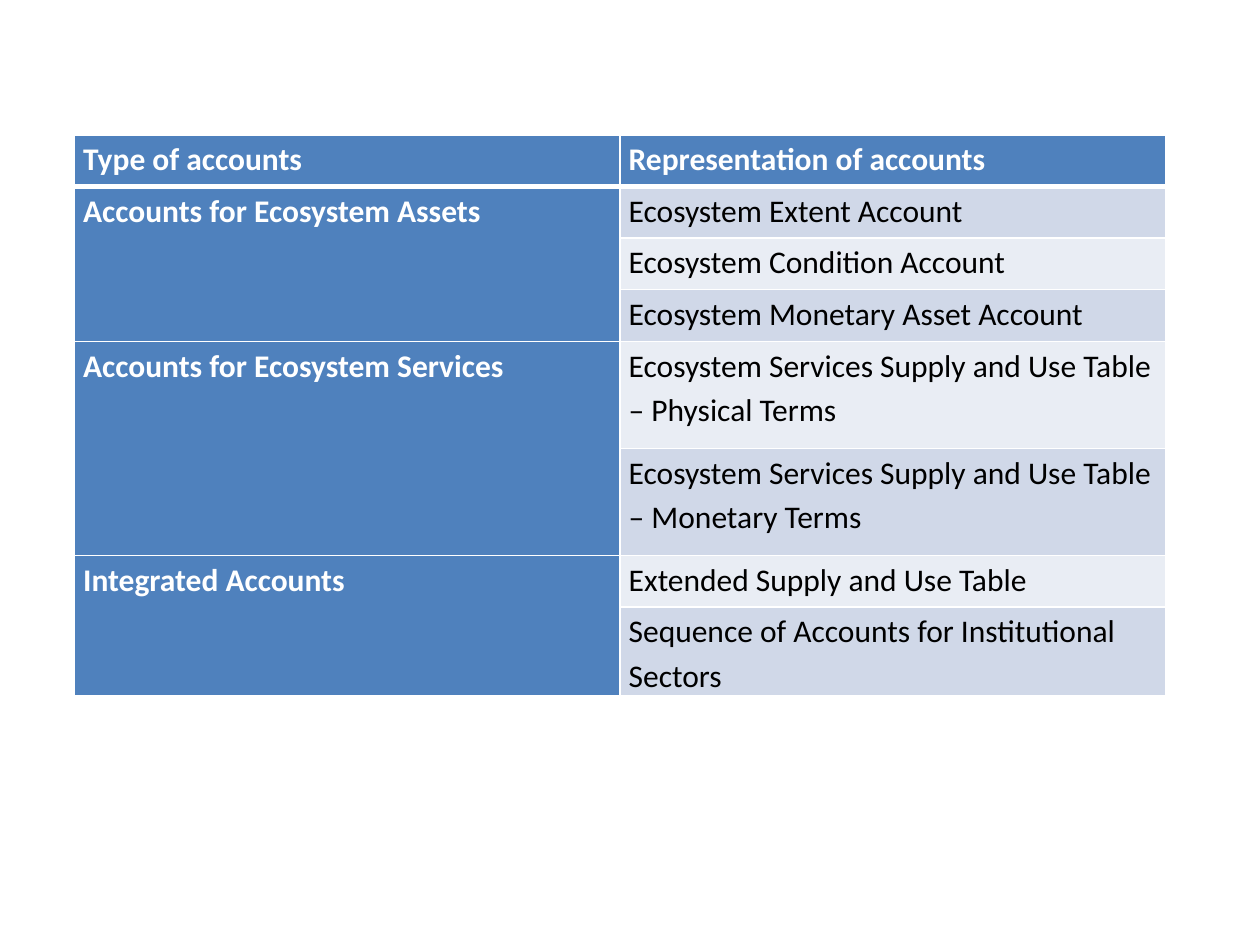
from lxml.etree import SubElement
from pptx import Presentation
from pptx.dml.color import RGBColor
from pptx.oxml.ns import qn
from pptx.util import Inches, Pt

HEADER = ("Type of accounts", "Representation of accounts")
GROUPS = {
    "Accounts for Ecosystem Assets": (
        "Ecosystem Extent Account",
        "Ecosystem Condition Account",
        "Ecosystem Monetary Asset Account",
    ),
    "Accounts for Ecosystem Services": (
        "Ecosystem Services Supply and Use Table – Physical Terms",
        "Ecosystem Services Supply and Use Table – Monetary Terms",
    ),
    "Integrated Accounts": (
        "Extended Supply and Use Table",
        "Sequence of Accounts for Institutional Sectors",
    ),
}
ROW_HEIGHTS = (0.41, 0.41, 0.41, 0.41, 0.85, 0.85, 0.41, 0.41)
BLUE, WHITE, BLACK = "4F81BD", "FFFFFF", "000000"
BANDS = ("E9EDF4", "D0D8E8")


def set_color(color, value):
    """Give a colour format the colour of a hex string."""
    color.rgb = RGBColor.from_string(value)


def set_attributes(target, values):
    """Set each named attribute of an object."""
    for name, value in values.items():
        setattr(target, name, value)


def add_borders(cell, widths):
    """Draw white borders of the given point widths around a cell."""
    properties = cell._tc.get_or_add_tcPr()
    for side, width in widths.items():
        line = SubElement(properties, qn(f"a:ln{side}"), w=str(Pt(width)))
        fill = SubElement(line, qn("a:solidFill"))
        SubElement(fill, qn("a:srgbClr"), val=WHITE)


def format_cell(cell, row, fill, color, bold):
    """Format the borders, fill, margins and text of a cell."""
    add_borders(cell, {"L": 1, "R": 1, "T": 3 if row == 1 else 1, "B": 3 if row == 0 else 1})
    cell.fill.solid()
    set_color(cell.fill.fore_color, fill)
    set_attributes(cell, {"margin_left": Inches(0.07), "margin_right": Inches(0.07),
                          "margin_top": 0, "margin_bottom": 0})
    for para in cell.text_frame.paragraphs:
        para.line_spacing = 1.15
        for span in para.runs:
            set_attributes(span.font, {"name": "Calibri", "size": Pt(18), "bold": bold})
            set_color(span.font.color, color)


def add_accounts_table(page, box):
    """Place the table of accounts in a box of left, top, width and height."""
    table = page.shapes.add_table(len(ROW_HEIGHTS), len(HEADER), *box).table
    for column in table.columns:
        column.width = box[2] // len(HEADER)
    for row, height in zip(table.rows, ROW_HEIGHTS):
        row.height = Inches(height)
    for column, heading in enumerate(HEADER):
        table.cell(0, column).text = heading
    first = 1
    for group, accounts in GROUPS.items():
        table.cell(first, 0).text = group
        for row, account in enumerate(accounts, first):
            table.cell(row, 1).text = account
        last = first + len(accounts) - 1
        table.cell(first, 0).merge(table.cell(last, 0))
        first = last + 1
    for row in range(len(ROW_HEIGHTS)):
        for column in range(len(HEADER)):
            heading = row == 0 or column == 0
            format_cell(table.cell(row, column), row, BLUE if heading else BANDS[row % 2],
                        WHITE if heading else BLACK, heading)


def main():
    """Build and save the deck."""
    deck = Presentation()
    set_attributes(deck, {"slide_width": Inches(10), "slide_height": Inches(7.5)})
    page = deck.slides.add_slide(deck.slide_layouts[6])
    box = (Inches(0.59), Inches(1.07), Inches(8.66), Inches(sum(ROW_HEIGHTS)))
    add_accounts_table(page, box)
    deck.save("out.pptx")


if __name__ == "__main__":
    main()
